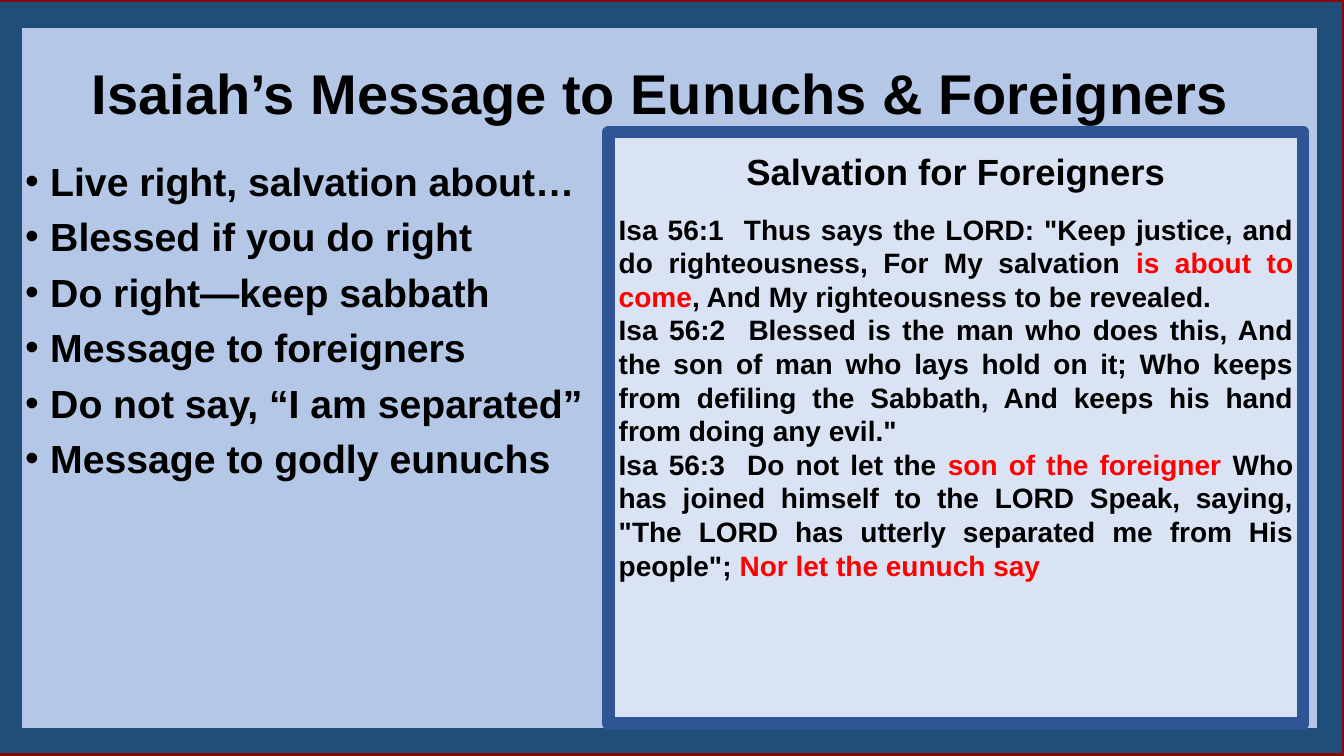
from lxml.etree import SubElement as Sub
from pptx import Presentation
from pptx.dml.color import RGBColor as Rgb
from pptx.enum.shapes import MSO_SHAPE as Shape
from pptx.enum.text import MSO_ANCHOR as Anchor, MSO_AUTO_SIZE as Auto, PP_ALIGN as Align
from pptx.oxml.ns import qn
from pptx.util import Pt

BLACK = Rgb(0x00, 0x00, 0x00)
RED = Rgb(0xFF, 0x00, 0x00)
MAROON = Rgb(0x86, 0x0A, 0x0A)
SKY = Rgb(0xB4, 0xC7, 0xE7)
NAVY = Rgb(0x1F, 0x4E, 0x79)
PALE = Rgb(0xDA, 0xE3, 0xF3)
BLUE = Rgb(0x2F, 0x55, 0x97)

POINTS = [
    "Live right, salvation about…",
    "Blessed if you do right",
    "Do right—keep sabbath",
    "Message to foreigners",
    "Do not say, “I am separated”",
    "Message to godly eunuchs",
]
VERSES = [
    [
        ('Isa 56:1  Thus says the LORD: "Keep justice, and do righteousness, For My salvation ', BLACK),
        ("is about to come", RED),
        (", And My righteousness to be revealed.", BLACK),
    ],
    [
        ("Isa 56:2  Blessed is the man who does this, And the son of man who lays hold on it; "
         'Who keeps from defiling the Sabbath, And keeps his hand from doing any evil."', BLACK),
    ],
    [
        ("Isa 56:3  Do not let the ", BLACK),
        ("son of the foreigner ", RED),
        ("Who has joined himself to the LORD Speak, saying, "
         '"The LORD has utterly separated me from His people"; ', BLACK),
        ("Nor let the eunuch say", RED),
    ],
]


class Deck:
    """Hold the slide and its text style, and draw each kind of element."""

    def __init__(self, font):
        self.font = font
        self.prs = Presentation()
        self.prs.slide_width, self.prs.slide_height = Pt(960), Pt(540)
        self.slide = self.prs.slides.add_slide(self.prs.slide_layouts[5])
        fill = self.slide.background.fill
        fill.solid()
        fill.fore_color.rgb = MAROON

    def style(self, par, size, align, after=0):
        par.alignment = align
        par.space_before, par.space_after = Pt(0), Pt(after)
        font = par.font
        font.name, font.size, font.bold = self.font, Pt(size), True
        font.color.rgb = BLACK

    def frame(self, box, anchor):
        text = box.text_frame
        text.word_wrap = True
        text.auto_size = Auto.NONE
        text.vertical_anchor = anchor
        return text

    def title(self, words, area, size):
        box = self.slide.shapes.title
        box.left, box.top, box.width, box.height = map(Pt, area)
        text = self.frame(box, Anchor.TOP)
        text.text = words
        self.style(text.paragraphs[0], size, Align.CENTER)
        self.slide.shapes._spTree.append(box._element)

    def panel(self, area, fill, edge, width, join):
        box = self.slide.shapes.add_shape(Shape.RECTANGLE, *map(Pt, area))
        box.shadow.inherit = False
        box.fill.solid()
        box.fill.fore_color.rgb = fill
        box.line.color.rgb = edge
        box.line.width = Pt(width)
        Sub(box.line._ln, qn("a:" + join))
        return box

    def verses(self, box, head, verses):
        text = self.frame(box, Anchor.TOP)
        text.margin_top = Pt(12)
        par = text.paragraphs[0]
        par.text = head
        self.style(par, 26, Align.CENTER, 14)
        for verse in verses:
            par = text.add_paragraph()
            self.style(par, 20, Align.JUSTIFY)
            for words, color in verse:
                run = par.add_run()
                run.text = words
                run.font.color.rgb = color

    def bullets(self, lines, area, size):
        box = self.slide.shapes.add_textbox(*map(Pt, area))
        text = self.frame(box, Anchor.TOP)
        for i, line in enumerate(lines):
            par = text.add_paragraph() if i else text.paragraphs[0]
            par.text = line
            props = par._p.get_or_add_pPr()
            props.set("marL", str(Pt(18)))
            props.set("indent", str(Pt(-18)))
            Sub(props, qn("a:buFont"), typeface=self.font)
            Sub(props, qn("a:buChar"), char="•")
            self.style(par, size, Align.LEFT, 6)


def main():
    deck = Deck("Arial")
    deck.panel((6.5, 10.8, 943, 518.4), SKY, NAVY, 18, "miter")
    box = deck.panel((434.9, 94.3, 496, 422.6), PALE, BLUE, 9, "round")
    deck.verses(box, "Salvation for Foreigners", VERSES)
    deck.bullets(POINTS, (10.8, 108.7, 437.8, 241.2), 28)
    deck.title("Isaiah’s Message to Eunuchs & Foreigners", (12.2, 38.2, 918, 55.4), 40)
    deck.prs.save("out.pptx")


if __name__ == "__main__":
    main()
